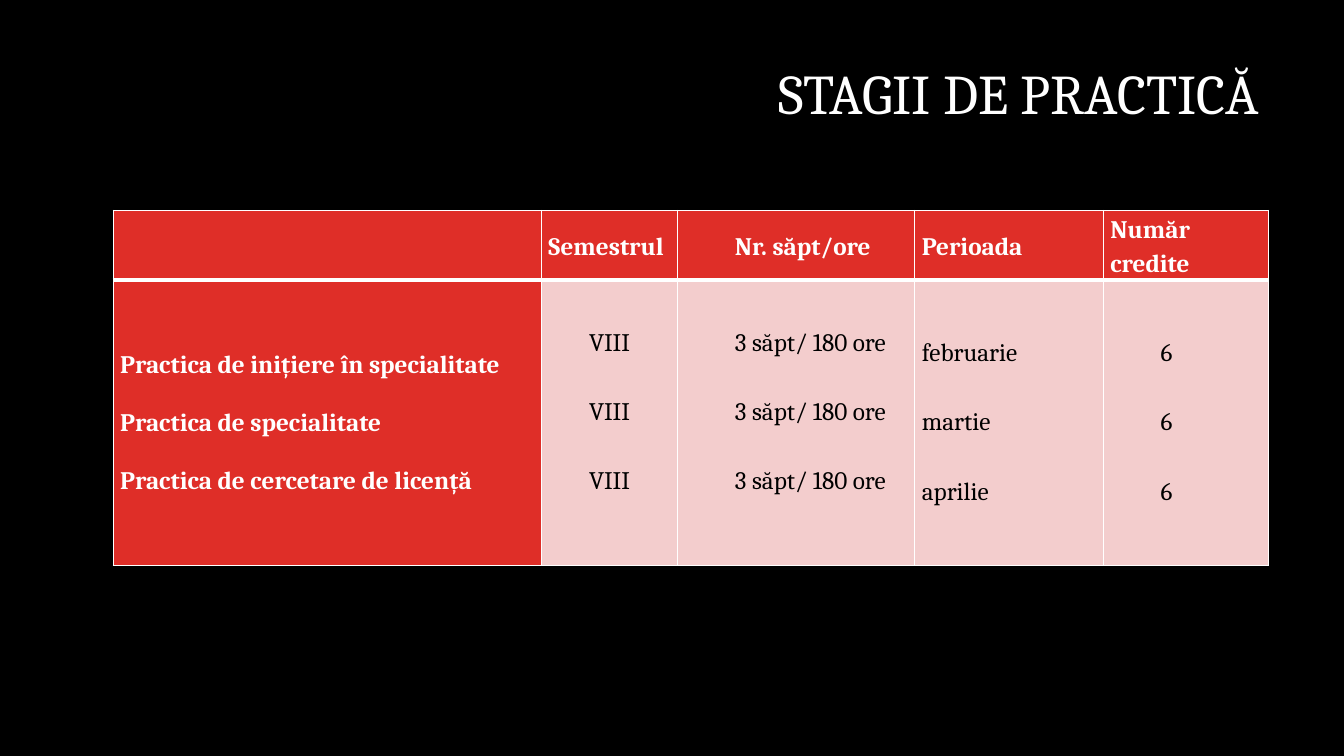
"""Build the slide listing the practice placements with their semester, hours, period and credits."""
from dataclasses import dataclass
from typing import Any

from lxml import etree
from pptx import Presentation
from pptx.dml.color import RGBColor
from pptx.enum.text import MSO_ANCHOR, PP_ALIGN
from pptx.oxml.ns import qn
from pptx.util import Pt

LEFT, CENTER, RIGHT, JUSTIFY = PP_ALIGN.LEFT, PP_ALIGN.CENTER, PP_ALIGN.RIGHT, PP_ALIGN.JUSTIFY
MIDDLE = MSO_ANCHOR.MIDDLE

COLORS = {"background": "000000", "light": "FFFFFF", "dark": "000000",
          "accent": "DF2E28", "tint": "F3CDCD"}
FONT = "Cambria"
HEADER_HEIGHT, BODY_HEIGHT = 47.7, 204
THIN, THICK = 1, 3


@dataclass(frozen=True)
class Column:
    width: float
    heading: str
    entries: tuple[str, ...]
    align: Any = JUSTIFY
    heading_indent: float = 0
    entry_indent: float = 0
    space_after: float = 8
    bottom_inset: float = 0
    is_label: bool = False


COLUMNS = (
    Column(306, "", ("Practica de inițiere în specialitate Practica de specialitate",
                     "Practica de cercetare de licență"),
           align=LEFT, space_after=0, bottom_inset=20, is_label=True),
    Column(97.2, "Semestrul", ("VIII",) * 3, align=CENTER, bottom_inset=36),
    Column(169.5, "Nr. săpt/ore", ("3 săpt/ 180 ore",) * 3,
           heading_indent=36, entry_indent=36, bottom_inset=36),
    Column(134.6, "Perioada", ("februarie", "martie", "aprilie"), bottom_inset=21),
    Column(118, "Număr credite", ("6",) * 3, entry_indent=36, bottom_inset=21),
)


def apply(target: Any, values: dict[str, Any]) -> None:
    for attribute, value in values.items():
        setattr(target, attribute, value)


def write(frame: Any, lines: tuple[str, ...], layout: dict[str, Any], color: str,
          size: float, bold: bool = False, indent: float = 0) -> None:
    for index, line in enumerate(lines):
        paragraph = frame.paragraphs[0] if index == 0 else frame.add_paragraph()
        apply(paragraph, layout)
        if indent:
            paragraph._p.get_or_add_pPr().set("indent", str(Pt(indent)))
        run = paragraph.add_run()
        apply(run, {"text": line})
        apply(run.font, {"name": FONT, "size": Pt(size), "bold": bold})
        run.font.color.rgb = RGBColor.from_string(COLORS[color])


def style_cell(cell: Any, fill: str, edges: dict[str, float], bottom_inset: float = 0) -> None:
    apply(cell, {"vertical_anchor": MIDDLE, "margin_left": Pt(5), "margin_right": Pt(5),
                 "margin_top": Pt(0), "margin_bottom": Pt(bottom_inset)})
    properties = cell._tc.get_or_add_tcPr()
    for edge, width in edges.items():
        border = etree.SubElement(properties, qn(f"a:{edge}"), w=str(Pt(width)))
        solid = etree.SubElement(border, qn("a:solidFill"))
        etree.SubElement(solid, qn("a:srgbClr"), val=COLORS["light"])
    cell.fill.solid()
    cell.fill.fore_color.rgb = RGBColor.from_string(COLORS[fill])


def add_title(slide: Any, title: str) -> None:
    frame = slide.shapes.add_textbox(Pt(228.2), Pt(21.6), Pt(678.2), Pt(95)).text_frame
    apply(frame, {"word_wrap": True, "vertical_anchor": MIDDLE})
    write(frame, (title,), {"alignment": RIGHT, "line_spacing": 0.9}, "light", 40)


def add_placements(slide: Any) -> None:
    table = slide.shapes.add_table(2, len(COLUMNS), Pt(80.8), Pt(150.4),
                                   Pt(sum(column.width for column in COLUMNS)),
                                   Pt(HEADER_HEIGHT + BODY_HEIGHT)).table
    apply(table, {"first_col": True})
    for row, height in zip(table.rows, (HEADER_HEIGHT, BODY_HEIGHT)):
        row.height = Pt(height)
    for index, column in enumerate(COLUMNS):
        table.columns[index].width = Pt(column.width)
        heading, body = table.cell(0, index), table.cell(1, index)
        style_cell(heading, "accent", {"lnL": THIN, "lnR": THIN, "lnT": THIN, "lnB": THICK})
        style_cell(body, "accent" if column.is_label else "tint",
                   {"lnL": THIN, "lnR": THIN, "lnT": THICK, "lnB": THIN}, column.bottom_inset)
        if column.heading:
            write(heading.text_frame, (column.heading,),
                  {"alignment": JUSTIFY, "line_spacing": 1.15, "space_after": Pt(8)},
                  "light", 18, True, column.heading_indent)
        write(body.text_frame, column.entries,
              {"alignment": column.align, "line_spacing": 2.0,
               "space_after": Pt(column.space_after)},
              "light" if column.is_label else "dark", 18, column.is_label, column.entry_indent)


def main() -> None:
    deck = Presentation()
    apply(deck, {"slide_width": Pt(960), "slide_height": Pt(540)})
    slide = deck.slides.add_slide(deck.slide_layouts[6])
    slide.background.fill.solid()
    slide.background.fill.fore_color.rgb = RGBColor.from_string(COLORS["background"])
    add_title(slide, "STAGII DE PRACTICĂ")
    add_placements(slide)
    deck.save("out.pptx")


if __name__ == "__main__":
    main()
